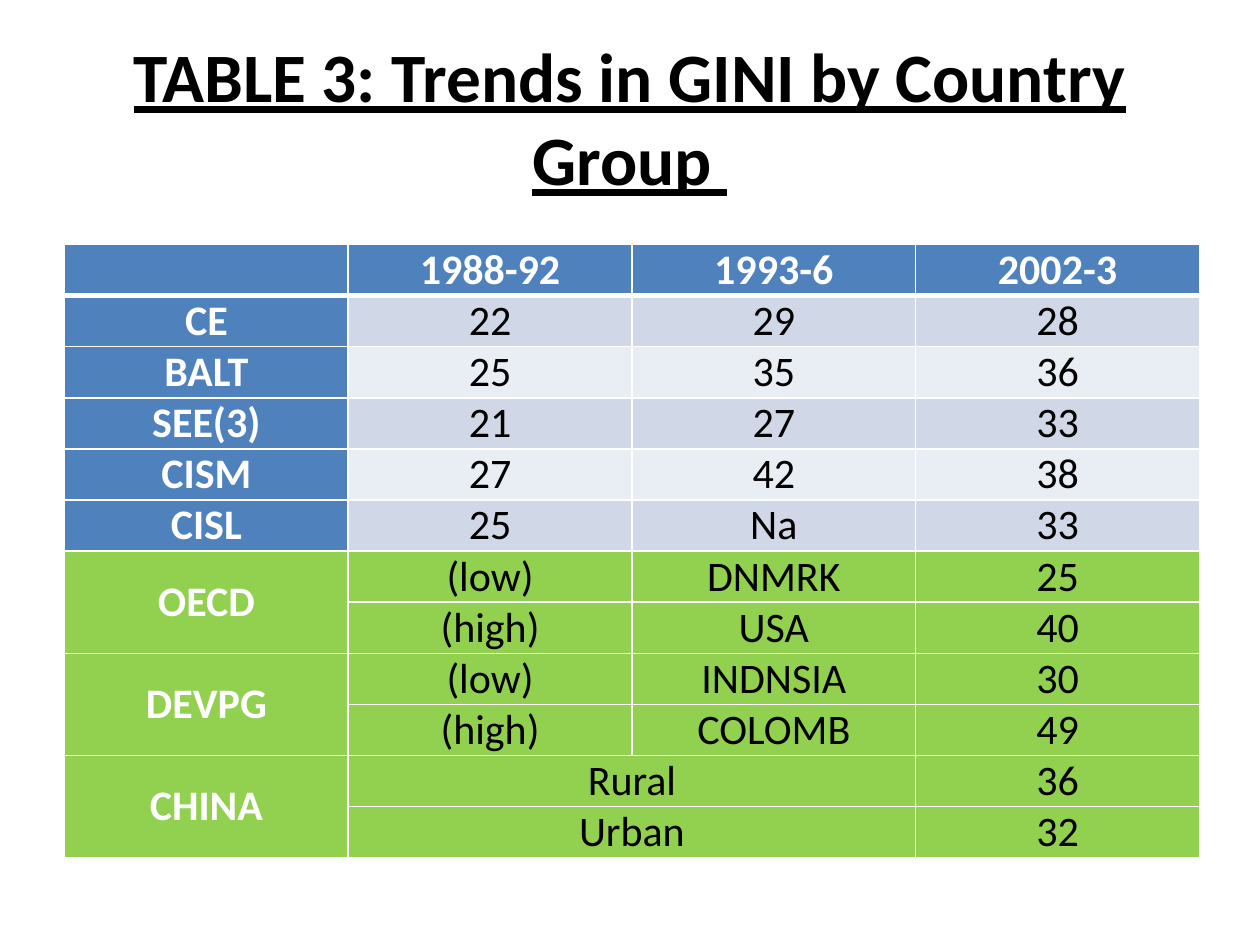
import pptx
import pptx.dml.color
import pptx.enum.text
import pptx.oxml.ns
import pptx.util
from lxml import etree

Cm = pptx.util.Cm
Pt = pptx.util.Pt
MIDDLE = pptx.enum.text.MSO_ANCHOR.MIDDLE

COLOURS = {
    "black": "000000",
    "white": "FFFFFF",
    "blue": "4F81BD",
    "band_dark": "D0D8E8",
    "band_light": "E9EDF4",
    "green": "92D050",
}

TITLE = "TABLE 3: Trends in GINI by Country Group "
ROWS = [
    ["", "1988-92", "1993-6", "2002-3"],
    ["CE", "22", "29", "28"],
    ["BALT", "25", "35", "36"],
    ["SEE(3)", "21", "27", "33"],
    ["CISM", "27", "42", "38"],
    ["CISL", "25", "Na", "33"],
    ["OECD", "(low)", "DNMRK", "25"],
    ["", "(high)", "USA", "40"],
    ["DEVPG", "(low)", "INDNSIA", "30"],
    ["", "(high)", "COLOMB", "49"],
    ["CHINA", "Rural", "", "36"],
    ["", "Urban", "", "32"],
]
FIRST_GREEN_ROW = 6
# Each merge runs from one (row, column) to another.
MERGES = [((row, 0), (row + 1, 0)) for row in (6, 8, 10)]
MERGES += [((row, 1), (row, 2)) for row in (10, 11)]


def rgb(name):
    return pptx.dml.color.RGBColor.from_string(COLOURS[name])


def write_text(text_frame, text, size=24, colour="black", bold=False, underline=False):
    """Put one centred, formatted paragraph into a text frame."""
    paragraph = text_frame.paragraphs[0]
    paragraph.alignment = pptx.enum.text.PP_ALIGN.CENTER
    # The paragraph font keeps empty cells as tall as filled ones.
    fonts = [paragraph.font]
    if text:
        run = paragraph.add_run()
        run.text = text
        fonts = [run.font]
    for font in fonts:
        font.name = "Calibri"
        font.size = Pt(size)
        font.bold = bold
        font.underline = underline
        font.color.rgb = rgb(colour)


def cell_fill(row, column):
    if row >= FIRST_GREEN_ROW:
        return "green"
    if row == 0 or column == 0:
        return "blue"
    return "band_dark" if row % 2 else "band_light"


class SlideBuilder:
    """Holds the border style and the slide being filled."""

    border_colour = "white"
    border_width = 1
    header_rule_width = 3

    def __init__(self, slide):
        self.slide = slide

    def add_title(self, text, left, top, width, height):
        text_box = self.slide.shapes.add_textbox(left, top, width, height)
        text_frame = text_box.text_frame
        text_frame.word_wrap = True
        text_frame.vertical_anchor = MIDDLE
        write_text(text_frame, text, size=39.6, bold=True, underline=True)

    def add_borders(self, cell, row):
        properties = cell._tc.get_or_add_tcPr()
        for side in "LRTB":
            under_header = (row, side) in ((0, "B"), (1, "T"))
            width = self.header_rule_width if under_header else self.border_width
            line = etree.SubElement(
                properties, pptx.oxml.ns.qn(f"a:ln{side}"), w=str(Pt(width))
            )
            fill = etree.SubElement(line, pptx.oxml.ns.qn("a:solidFill"))
            etree.SubElement(
                fill, pptx.oxml.ns.qn("a:srgbClr"), val=COLOURS[self.border_colour]
            )

    def add_table(self, rows, merges, left, top, column_width, row_height):
        row_count, column_count = len(rows), len(rows[0])
        table = self.slide.shapes.add_table(
            row_count, column_count, left, top,
            column_width * column_count, row_height * row_count,
        ).table
        table.first_col = True
        for row, texts in enumerate(rows):
            for column, text in enumerate(texts):
                self.fill_cell(table.cell(row, column), text, row, column)
        for first, last in merges:
            table.cell(*first).merge(table.cell(*last))

    def fill_cell(self, cell, text, row, column):
        cell.margin_left = cell.margin_right = Cm(0.18)
        cell.margin_top = cell.margin_bottom = 0
        cell.vertical_anchor = MIDDLE
        self.add_borders(cell, row)
        cell.fill.solid()
        cell.fill.fore_color.rgb = rgb(cell_fill(row, column))
        heading = row == 0 or column == 0
        write_text(
            cell.text_frame, text, colour="white" if heading else "black", bold=heading
        )


def main():
    presentation = pptx.Presentation()
    presentation.slide_width = Cm(25.4)
    presentation.slide_height = Cm(19.05)
    builder = SlideBuilder(presentation.slides.add_slide(presentation.slide_layouts[6]))
    builder.add_title(TITLE, Cm(1.27), Cm(0.76), Cm(22.86), Cm(3.18))
    builder.add_table(ROWS, MERGES, Cm(1.3), Cm(4.93), Cm(5.72), Cm(1.03))
    presentation.save("out.pptx")


if __name__ == "__main__":
    main()
